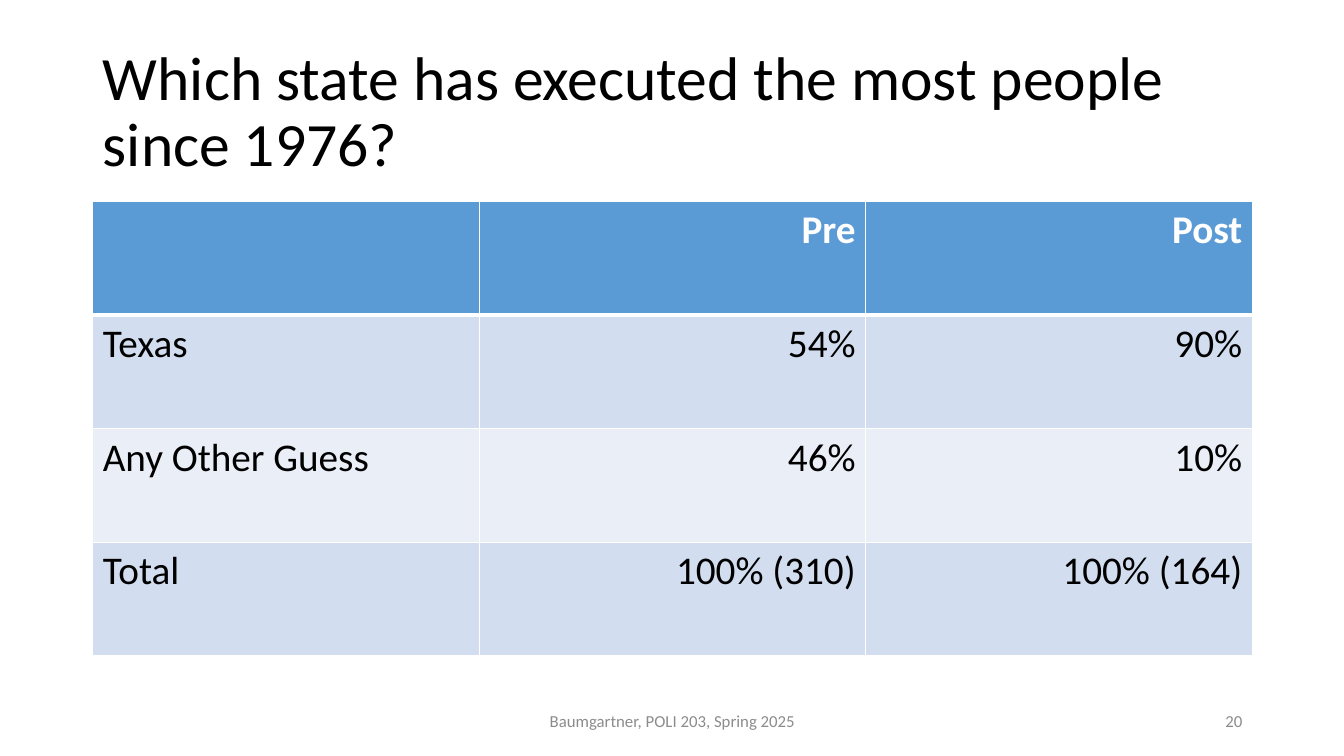
"""Build the slide on which state has executed the most people since 1976."""
import pptx
import pptx.dml.color
import pptx.enum.text
import pptx.oxml
import pptx.oxml.ns
import pptx.util
from pptx.util import Inches

RGBColor = pptx.dml.color.RGBColor
PP_ALIGN = pptx.enum.text.PP_ALIGN
MIDDLE = pptx.enum.text.MSO_ANCHOR.MIDDLE

BLACK = RGBColor(0x00, 0x00, 0x00)
WHITE = RGBColor(0xFF, 0xFF, 0xFF)
GRAY = RGBColor(0x8C, 0x8C, 0x8C)
HEADER_BLUE = RGBColor(0x5B, 0x9B, 0xD5)
BAND_DARK = RGBColor(0xD2, 0xDE, 0xEF)
BAND_LIGHT = RGBColor(0xEA, 0xEF, 0xF7)


def write(paragraph, text, size, color, align, bold=False):
    paragraph.alignment = align
    run = paragraph.add_run()
    run.text = text
    run.font.name = "Calibri"
    run.font.size = pptx.util.Pt(size)
    run.font.bold = bold
    run.font.color.rgb = color


def set_border(cell, side, points):
    line = pptx.oxml.parse_xml(
        f'<a:{side} {pptx.oxml.ns.nsdecls("a")} w="{pptx.util.Pt(points)}">'
        f'<a:solidFill><a:srgbClr val="{WHITE}"/></a:solidFill></a:{side}>'
    )
    cell._tc.get_or_add_tcPr().append(line)


presentation = pptx.Presentation()
presentation.slide_width = Inches(13.33)
presentation.slide_height = Inches(7.5)
slide = presentation.slides.add_slide(presentation.slide_layouts[5])

question = slide.shapes.title
question.left, question.top = Inches(0.92), Inches(0.4)
question.width, question.height = Inches(11.5), Inches(1.45)
question.text_frame.vertical_anchor = MIDDLE
question_line = question.text_frame.paragraphs[0]
question_line.line_spacing = 0.9
write(question_line, "Which state has executed the most people since 1976?", 44, BLACK, PP_ALIGN.LEFT)

answers = [
    ["", "Pre", "Post"],
    ["Texas", "54%", "90%"],
    ["Any Other Guess", "46%", "10%"],
    ["Total", "100% (310)", "100% (164)"],
]
answer_table = slide.shapes.add_table(
    len(answers), len(answers[0]), Inches(0.92), Inches(2), Inches(11.5), Inches(4.51)
).table
for row, values in enumerate(answers):
    is_header = row == 0
    band = HEADER_BLUE if is_header else BAND_DARK if row % 2 else BAND_LIGHT
    for column, value in enumerate(values):
        cell = answer_table.cell(row, column)
        set_border(cell, "lnL", 1)
        set_border(cell, "lnR", 1)
        set_border(cell, "lnT", 3 if row == 1 else 1)
        set_border(cell, "lnB", 3 if is_header else 1)
        cell.fill.solid()
        cell.fill.fore_color.rgb = band
        if value:
            write(cell.text_frame.paragraphs[0], value, 28, WHITE if is_header else BLACK,
                  PP_ALIGN.RIGHT if column else PP_ALIGN.LEFT, is_header)

footers = [
    ("Baumgartner, POLI 203, Spring 2025", 4.42, 4.5, PP_ALIGN.CENTER),
    ("20", 9.42, 3, PP_ALIGN.RIGHT),
]
for text, left, width, align in footers:
    footer = slide.shapes.add_textbox(Inches(left), Inches(6.95), Inches(width), Inches(0.4))
    footer.text_frame.word_wrap = True
    footer.text_frame.vertical_anchor = MIDDLE
    write(footer.text_frame.paragraphs[0], text, 12, GRAY, align)

presentation.save("out.pptx")
